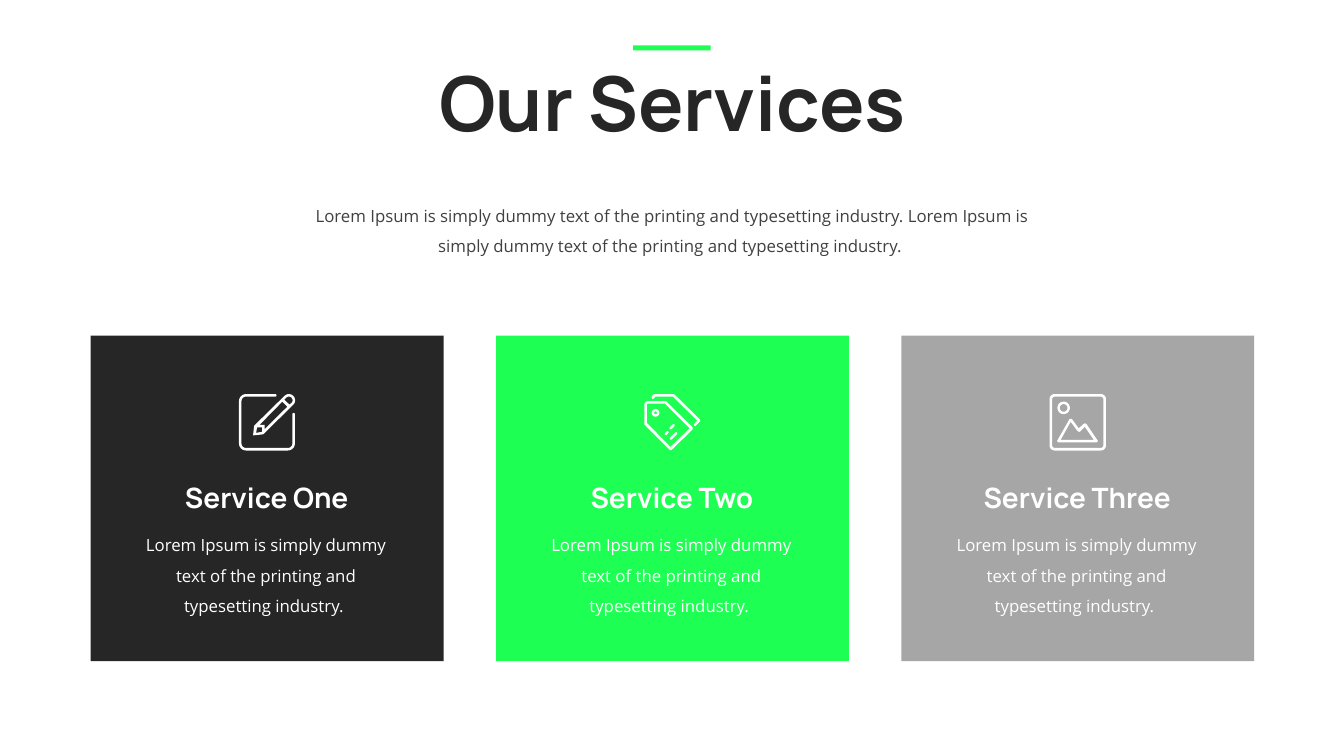
from dataclasses import dataclass
from math import cos, radians, sin

from lxml.etree import SubElement
from pptx import Presentation
from pptx.dml.color import RGBColor
from pptx.enum.shapes import MSO_SHAPE as Preset
from pptx.enum.text import MSO_ANCHOR as Anchor, MSO_AUTO_SIZE as AutoSize, PP_ALIGN as Align
from pptx.oxml.ns import qn
from pptx.util import Inches, Pt

WHITE = RGBColor(0xFF, 0xFF, 0xFF)
DARK = RGBColor(0x26, 0x26, 0x26)
GREEN = RGBColor(0x1D, 0xFF, 0x53)
GRAY = RGBColor(0xA6, 0xA6, 0xA6)
TEXT_GRAY = RGBColor(0x40, 0x40, 0x40)

HEAD_FONT, BODY_FONT = "Manrope", "Open Sans"
LOREM = "Lorem Ipsum is simply dummy text of the printing and typesetting industry. "
CARD_LEFT, CARD_TOP, CARD_PITCH = 0.9, 3.33, 4.02
CARD_W, CARD_H = 3.5, 3.23

Contour = list[tuple[float, float]]


@dataclass
class Service:
    name: str
    color: RGBColor
    icon: list[Contour]


def arc(cx: float, cy: float, radius: float, start: int, end: int) -> Contour:
    """Points along an arc, in degrees clockwise from the right."""
    steps = max(4, abs(end - start) // 15)
    angles = [radians(start + (end - start) * i / steps) for i in range(steps + 1)]
    return [(cx + radius * cos(a), cy + radius * sin(a)) for a in angles]


def circle(cx: float, cy: float, radius: float) -> Contour:
    return arc(cx, cy, radius, 0, 360)


def rounded_square(near: float, far: float, radius: float) -> Contour:
    low, high = near + radius, far - radius
    return [*arc(low, low, radius, 180, 270), *arc(high, low, radius, 270, 360),
            *arc(high, high, radius, 0, 90), *arc(low, high, radius, 90, 180)]


def dash(x1: float, y1: float, x2: float, y2: float) -> Contour:
    """Round-ended stroke rising to the right at 45 degrees."""
    return [*arc(x1, y1, 1.2, 45, 225), *arc(x2, y2, 1.2, 225, 405)]


# Icon contours are in hundredths of an inch; inner contours cut holes.
PENCIL = [
    [(36, 2.5), *arc(7, 7, 4.5, 270, 180), *arc(7, 49, 4.5, 180, 90),
     *arc(48.5, 49, 4.5, 90, 0), *arc(54.25, 20, 1.25, 180, 360),
     *arc(48.5, 49, 7, 0, 90), *arc(7, 49, 7, 90, 180),
     *arc(7, 7, 7, 180, 270), *arc(36, 1.25, 1.25, 270, 450)],
    [(14, 41), (15, 31.5), *arc(49.5, 6.2, 6.2, -135, 45), (24, 40)],
    [(17, 38.5), (18, 33), (23, 33), (23, 37.5)],
    [(20.5, 30.5), (43, 7.5), (48, 12.5), (25.5, 35), (25.5, 30.5)],
    [(45, 5.5), *arc(49.5, 6.2, 3.7, -135, 45), (50, 10.5)],
]
TAGS = [
    [*arc(4, 11, 4, 180, 270), (21, 7), (22, 7.5), (48, 33), (48, 35),
     (27, 55.5), (25.5, 55.5), (0, 30)],
    [(2.5, 28.5), *arc(4, 11, 1.5, 180, 270), (20.5, 9.5), (45, 34), (26, 52.5)],
    circle(11.2, 18.6, 3.8),
    circle(11.2, 18.6, 1.4),
    dash(26.5, 44, 31.5, 39),
    dash(21.5, 39.5, 23, 38),
    dash(26.2, 33.8, 29, 31),
    [(7.3, 4), (7.5, 2.5), (9, 0.5), (11, 0), (29, 0), (30, 0.5), (55.5, 25.5),
     (55.5, 27), (51, 31.5), (49.5, 31.5), (49.2, 30), (52.5, 26.3),
     (28.5, 2.5), (11, 2.5), (9.8, 4), (8.6, 5)],
]
PHOTO = [
    rounded_square(0, 56, 5),
    rounded_square(2.5, 53.5, 3),
    circle(14, 13.7, 6.2),
    circle(14, 13.7, 3.8),
    [(8.5, 48), (7.5, 46.5), (20, 24.5), (22, 24.5), (29, 34), (34.5, 29),
     (36.5, 29.5), (48, 46.5), (47, 48)],
    [(11, 45.5), (21, 27.5), (28, 37), (30, 37.5), (35, 32.5), (44, 45.5)],
]

SERVICES = [
    Service("Service One", DARK, PENCIL),
    Service("Service Two", GREEN, TAGS),
    Service("Service Three", GRAY, PHOTO),
]


def paint(sp, color: RGBColor) -> None:
    sp.fill.solid()
    sp.fill.fore_color.rgb = color
    sp.line.fill.background()
    sp.shadow.inherit = False


def add_rect(s, left: float, top: float, width: float, height: float, color: RGBColor) -> None:
    box = map(Inches, (left, top, width, height))
    paint(s.shapes.add_shape(Preset.RECTANGLE, *box), color)


def add_icon(s, left: float, top: float, contours: list[Contour]) -> None:
    first, *rest = [[(Inches(x / 100), Inches(y / 100)) for x, y in c] for c in contours]
    builder = s.shapes.build_freeform(*first[0])
    builder.add_line_segments(first[1:])
    for contour in rest:
        builder.move_to(*contour[0])
        builder.add_line_segments(contour[1:])
    paint(builder.convert_to_shape(Inches(left), Inches(top)), WHITE)


def place(sp, left: float, top: float, width: float, height: float) -> None:
    sp.left, sp.top = Inches(left), Inches(top)
    sp.width, sp.height = Inches(width), Inches(height)


def write(sp, text: str, size: int, font: str, color: RGBColor,
          bold: bool = False, spacing: float = 1.0) -> None:
    tf = sp.text_frame
    tf.word_wrap = True
    tf.auto_size = AutoSize.SHAPE_TO_FIT_TEXT
    tf.vertical_anchor = Anchor.TOP
    p = tf.paragraphs[0]
    p.alignment = Align.CENTER
    p.line_spacing = spacing
    p.space_before = Pt(0)
    r = p.add_run()
    r.text = text
    r.font.size, r.font.name, r.font.bold = Pt(size), font, bold
    r.font.color.rgb = color


def add_text(s, left: float, top: float, width: float, height: float):
    return s.shapes.add_textbox(*map(Inches, (left, top, width, height)))


def add_card(s, left: float, service: Service) -> None:
    add_rect(s, left, CARD_TOP, CARD_W, CARD_H, service.color)
    add_icon(s, left + 1.47, 3.91, service.icon)
    write(add_text(s, left + 0.63, 4.72, 2.23, 0.44),
          service.name, 20, HEAD_FONT, WHITE, bold=True)
    write(add_text(s, left + 0.36, 5.16, 2.76, 1.01),
          LOREM, 12, BODY_FONT, WHITE, spacing=1.5)


def main() -> None:
    prs = Presentation()
    prs.slide_width, prs.slide_height = Inches(13.33), Inches(7.5)
    s = prs.slides.add_slide(prs.slide_layouts[1])
    title, intro = s.placeholders

    place(title, 3.7, 0.5, 5.94, 1.01)
    write(title, "Our Services", 54, HEAD_FONT, DARK, bold=True)
    add_rect(s, 6.28, 0.45, 0.77, 0.05, GREEN)

    place(intro, 2.77, 1.89, 7.8, 0.67)
    write(intro, LOREM * 2, 12, BODY_FONT, TEXT_GRAY, spacing=1.5)
    props = intro.text_frame.paragraphs[0]._p.get_or_add_pPr()
    props.set("marL", "0")
    props.set("indent", "0")
    SubElement(props, qn("a:buNone"))

    for i, service in enumerate(SERVICES):
        add_card(s, CARD_LEFT + i * CARD_PITCH, service)

    prs.save("out.pptx")


if __name__ == "__main__":
    main()
